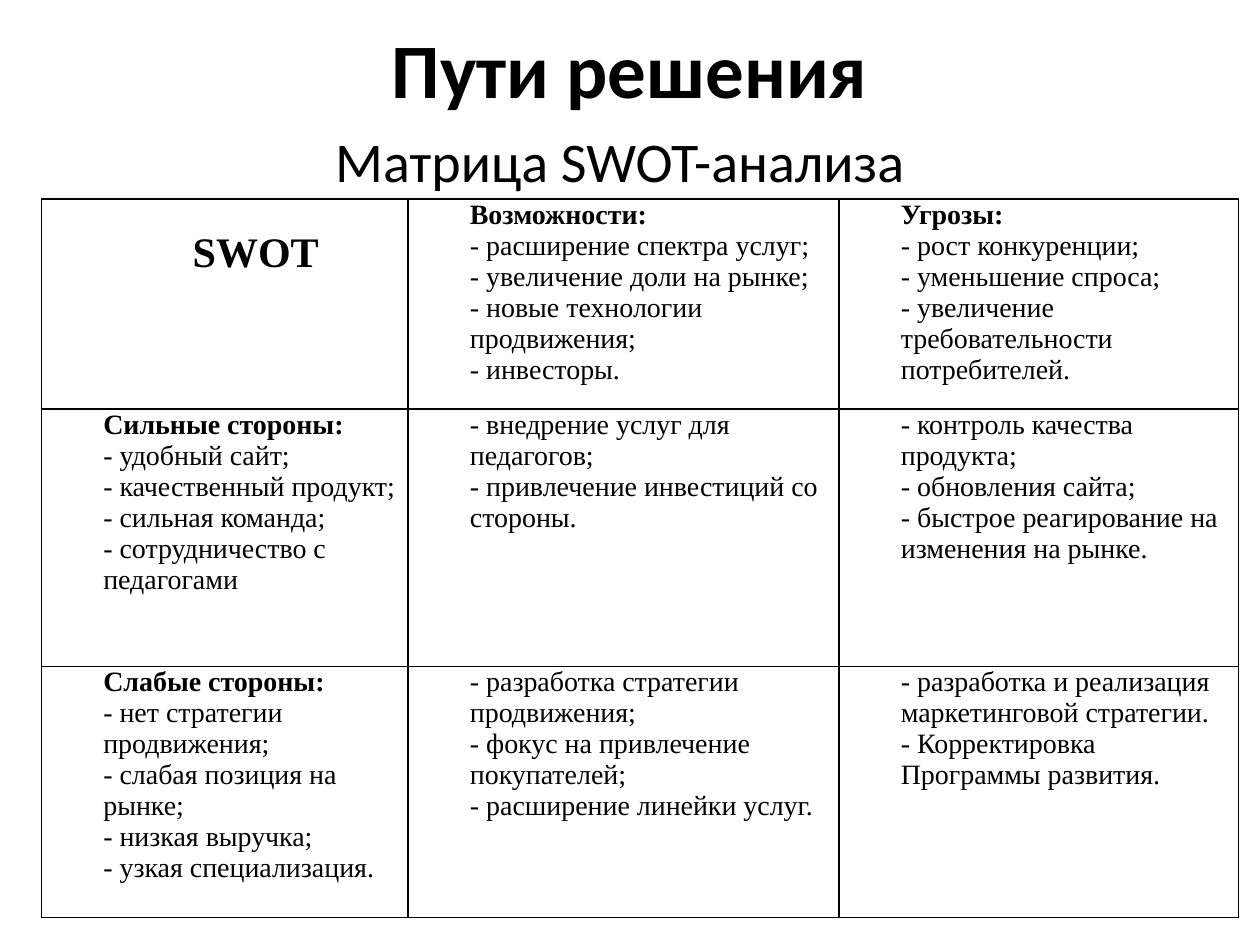
import pptx
import pptx.util
import pptx.dml.color
import pptx.enum.text
import pptx.oxml
from lxml import etree

Pt = pptx.util.Pt
CENTER = pptx.enum.text.PP_ALIGN.CENTER
ANCHOR = pptx.enum.text.MSO_ANCHOR

HEADINGS = [
    ("Пути решения", (36, 0, 648, 77.76), ANCHOR.MIDDLE, 3.6, {"size": Pt(44), "bold": True}),
    ("Матрица SWOT-анализа", (30.24, 66.24, 648, 59.76), ANCHOR.TOP, 6, {"size": Pt(32), "bold": False}),
]
TABLE_LEFT, TABLE_TOP = 23.76, 113.76
COLS = [209.5, 246.25, 228.25]
ROWS = [120, 147, 143.5]
INDENT = 35.28
CORNER = "SWOT"
CELLS = [
    [
        [CORNER],
        ["Возможности:", "- расширение спектра услуг;", "- увеличение доли на рынке;",
         "- новые технологии продвижения;", "- инвесторы."],
        ["Угрозы:", "- рост конкуренции;", "- уменьшение спроса;",
         "- увеличение требовательности потребителей."],
    ],
    [
        ["Сильные стороны:", "- удобный сайт;", "- качественный продукт;",
         "- сильная команда;", "- сотрудничество с педагогами"],
        ["- внедрение услуг для педагогов;", "- привлечение инвестиций со стороны."],
        ["- контроль качества продукта;", "- обновления сайта;",
         "- быстрое реагирование на изменения на рынке."],
    ],
    [
        ["Слабые стороны:", "- нет стратегии продвижения;", "- слабая позиция на рынке;",
         "- низкая выручка;", "- узкая специализация."],
        ["- разработка стратегии продвижения;", "- фокус на привлечение покупателей;",
         "- расширение линейки услуг."],
        ["- разработка и реализация маркетинговой стратегии.",
         "- Корректировка Программы развития."],
    ],
]


def color(value):
    return pptx.dml.color.RGBColor.from_string(value)


def set_attrs(obj, values):
    for name, value in values.items():
        setattr(obj, name, value)


def add_run(p, text, font):
    r = p.add_run()
    r.text = text
    set_attrs(r.font, font)
    r.font.color.rgb = color("000000")


def add_borders(cell):
    tcPr = cell._tc.get_or_add_tcPr()
    for i, side in enumerate(("lnL", "lnR", "lnT", "lnB")):
        ln = pptx.oxml.parse_xml(
            f'<a:{side} xmlns:a="http://schemas.openxmlformats.org/drawingml/2006/main" '
            f'w="{Pt(1)}"><a:solidFill><a:srgbClr val="000000"/></a:solidFill></a:{side}>')
        tcPr.insert(i, ln)


def add_heading(s, text, box, anchor, top, font):
    tf = s.shapes.add_textbox(*map(Pt, box)).text_frame
    set_attrs(tf, {"word_wrap": True, "vertical_anchor": anchor, "margin_top": Pt(top)})
    p = tf.paragraphs[0]
    p.alignment = CENTER
    add_run(p, text, {"name": "Calibri", **font})


def fill_cell(cell, lines):
    set_attrs(cell, dict.fromkeys(("margin_left", "margin_right", "margin_top", "margin_bottom"), 0))
    cell.fill.background()
    add_borders(cell)
    tf = cell.text_frame
    for i, text in enumerate(lines):
        p = tf.add_paragraph() if i else tf.paragraphs[0]
        corner = text == CORNER
        pPr = p._p.get_or_add_pPr()
        pPr.set("marL", str(0 if corner else Pt(INDENT)))
        pPr.set("indent", str(Pt(INDENT) if corner else 0))
        if corner:
            p.alignment = CENTER
            cell.margin_top = Pt(17.7)
        add_run(p, text, {"name": "Times New Roman", "size": Pt(24 if corner else 16),
                          "bold": corner or text.endswith(":")})


def add_matrix(s):
    table = s.shapes.add_table(len(ROWS), len(COLS), Pt(TABLE_LEFT), Pt(TABLE_TOP),
                               Pt(sum(COLS)), Pt(sum(ROWS))).table
    set_attrs(table, {"first_row": False, "horz_banding": False})
    for col, width in zip(table.columns, COLS):
        col.width = Pt(width)
    for row, height, content in zip(table.rows, ROWS, CELLS):
        row.height = Pt(height)
        for cell, lines in zip(row.cells, content):
            fill_cell(cell, lines)


def main():
    prs = pptx.Presentation()
    set_attrs(prs, {"slide_width": Pt(720), "slide_height": Pt(540)})
    s = prs.slides.add_slide(prs.slide_layouts[6])
    for heading in HEADINGS:
        add_heading(s, *heading)
    add_matrix(s)
    prs.save("out.pptx")


if __name__ == "__main__":
    main()
